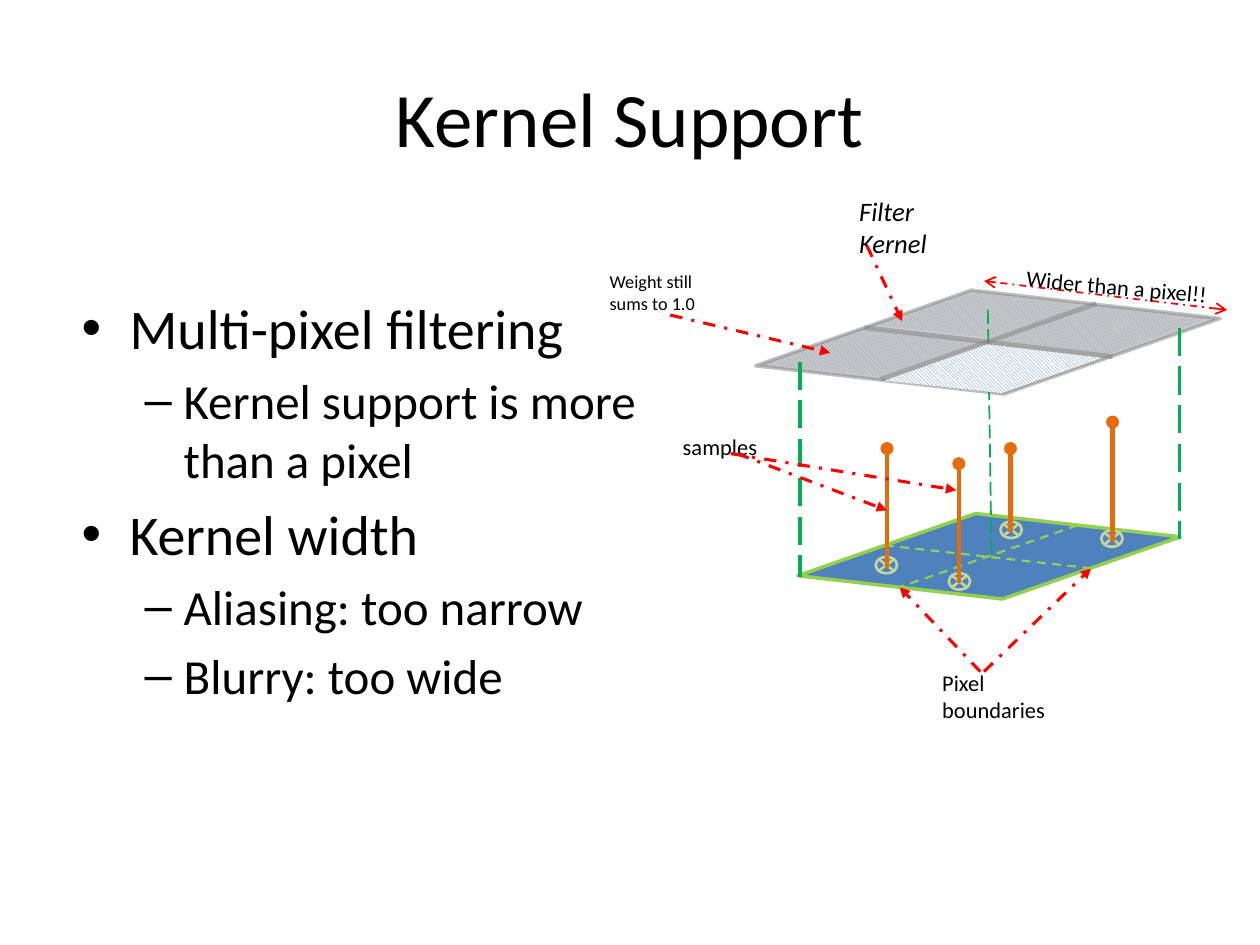
import pptx
import pptx.util
import pptx.dml.color
import pptx.enum.dml
import pptx.enum.shapes
import pptx.enum.text
import pptx.oxml.ns
from lxml import etree

PX = 9144  # 100 px to the inch
Pt = pptx.util.Pt
RGB = pptx.dml.color.RGBColor.from_string
SHAPE = pptx.enum.shapes.MSO_SHAPE
DASH = pptx.enum.dml.MSO_LINE
ALIGN = pptx.enum.text.PP_ALIGN
ANCHOR = pptx.enum.text.MSO_ANCHOR
qn = pptx.oxml.ns.qn

THEME = dict(
    font="Calibri", ink="000000", paper="FFFFFF", blue="4F81BD",
    edge="92D050", veil="A6A6A6", grey="808080", post="00B050",
    red="FF0000", stem="E46C0A", ring="C3D69B",
    title=44, levels=(32, 28), label=12.8, small=10.4, kernel=15.2)
MARKS = (("•", 38, -38), ("–", 81, -31))  # bullet, margin, indent

deck = pptx.Presentation()
deck.slide_width, deck.slide_height = 1000 * PX, 750 * PX
slide = deck.slides.add_slide(deck.slide_layouts[6])
shapes = slide.shapes


def text(words, box, size=THEME["label"], levels=None, align=ALIGN.LEFT,
         anchor=ANCHOR.TOP, italic=False, turn=0, gap=0.2):
    item = shapes.add_textbox(*[n * PX for n in box])
    item.rotation = turn
    frame = item.text_frame
    frame.word_wrap = True
    frame.vertical_anchor = anchor
    for i, row in enumerate(words.split("\n")):
        para = frame.add_paragraph() if i else frame.paragraphs[0]
        para.alignment = align
        high = THEME["levels"][levels[i]] if levels else size
        para.space_before = Pt(round(high * gap, 1))
        if levels:
            mark, left, indent = MARKS[levels[i]]
            props = para._p.get_or_add_pPr()
            props.set("marL", str(left * PX))
            props.set("indent", str(indent * PX))
            etree.SubElement(props, qn("a:buFont"), typeface="Arial")
            etree.SubElement(props, qn("a:buChar"), char=mark)
        run = para.add_run()
        run.text = row
        run.font.name = THEME["font"]
        run.font.size = Pt(high)
        run.font.italic = italic
        run.font.color.rgb = RGB(THEME["ink"])


def line(start, end, color, width, dash=None, head=None, tail=None, alpha=None):
    item = shapes.add_connector(pptx.enum.shapes.MSO_CONNECTOR.STRAIGHT,
                                *[n * PX for n in start + end])
    item.line.color.rgb = RGB(THEME[color])
    item.line.width = Pt(width)
    if dash:
        item.line.dash_style = dash
    props = item._element.spPr
    pen = props.find(qn("a:ln"))
    if alpha:
        etree.SubElement(next(pen.iter(qn("a:srgbClr"))), qn("a:alpha"),
                         val=str(alpha * 1000))
    for name, kind in (("a:headEnd", head), ("a:tailEnd", tail)):
        if kind:
            etree.SubElement(pen, qn(name), type=kind)
    etree.SubElement(props, qn("a:effectLst"))


# Title and bullets
text("Kernel Support", (50, 30, 900, 125), size=THEME["title"],
     align=ALIGN.CENTER, anchor=ANCHOR.MIDDLE, gap=0)
text("Multi-pixel filtering\nKernel support is more than a pixel\n"
     "Kernel width\nAliasing: too narrow\nBlurry: too wide",
     (55, 228, 477, 330), levels=(0, 1, 0, 1, 1))

# Hatched kernel patches; the front one lies over the plates
patches = [
    [(605, 289), (686, 260), (778, 271), (699, 299)],
    [(786, 270), (867, 242), (959, 253), (880, 281)],
    [(696, 258), (773, 232), (862, 243), (784, 268)],
    [(702, 302), (783, 273), (875, 284), (795, 312)],
]
plates = [
    ((603, 232, 362, 79), "veil", 59, "grey", 49),
    ((636, 409, 298, 65), "blue", 100, "edge", 100),
]
for i, spots in enumerate(patches):
    if i == 3:
        # Kernel plate above, pixel plate below
        for box, fill, clear, edge, fade in plates:
            plate = shapes.add_shape(SHAPE.PARALLELOGRAM, *[n * PX for n in box])
            plate.adjustments[0] = 2.07
            plate.rotation = 6.5
            plate.shadow.inherit = False
            plate.fill.solid()
            plate.fill.fore_color.rgb = RGB(THEME[fill])
            plate.line.color.rgb = RGB(THEME[edge])
            plate.line.width = Pt(2)
            tones = plate._element.spPr.iter(qn("a:srgbClr"))
            for tone, alpha in zip(list(tones), (clear, fade)):
                if alpha < 100:
                    etree.SubElement(tone, qn("a:alpha"), val=str(alpha * 1000))
        line((784, 246), (787, 441), "post", 1, DASH.LONG_DASH)
    pen = shapes.build_freeform(*spots[0], scale=PX)
    pen.add_line_segments(spots[1:], close=True)
    patch = pen.convert_to_shape()
    patch.shadow.inherit = False
    patch.fill.patterned()
    patch.fill.pattern = pptx.enum.dml.MSO_PATTERN.DARK_DOWNWARD_DIAGONAL
    patch.fill.fore_color.rgb = RGB(THEME["blue"])
    patch.fill.back_color.rgb = RGB(THEME["paper"])
    patch.line.fill.background()

# Pixel boundaries
text("Pixel boundaries", (738, 526, 104, 63))
for start, end in (((778, 533), (714, 466)), ((781, 533), (866, 451))):
    line(start, end, "red", 1.75, DASH.DASH_DOT, tail="triangle")
for start, end in (((855, 417), (714, 466)), ((866, 451), (704, 433))):
    line(start, end, "edge", 1.25, DASH.DASH)

# Samples: a ring on the pixel plate, then a stem with a round top
for x, y in ((695, 442), (794, 414), (753, 455), (874, 421)):
    ring = shapes.add_shape(SHAPE.FLOWCHART_SUMMING_JUNCTION,
                            x * PX, y * PX, 17 * PX, 13 * PX)
    ring.shadow.inherit = False
    ring.fill.background()
    ring.line.color.rgb = RGB(THEME["ring"])
    ring.line.width = Pt(1.5)
for x, top, foot in ((802, 356, 422), (704, 356, 451),
                     (883, 335, 430), (761, 368, 463)):
    line((x, top), (x, foot), "stem", 2.5, head="oval")

# Corner posts
for x, top, foot in ((635, 287, 458), (936, 260, 428)):
    line((x, top), (x, foot), "post", 2, DASH.LONG_DASH)

# Kernel dividers and width
line((883, 283), (686, 260), "grey", 2.75, alpha=49)
line((974, 246), (781, 223), "red", 1, DASH.DASH_DOT, head="arrow", tail="arrow")
text("Wider than a pixel!!", (804, 212, 176, 45), turn=5.2)

# Labels with their pointers
text("Weight still sums to 1.0", (474, 210, 107, 44), size=THEME["small"])
text("samples", (532, 339, 88, 43))
text("Filter Kernel", (672, 150, 100, 54), size=THEME["kernel"], italic=True)
line((870, 241), (699, 301), "grey", 2.75, alpha=49)
for start, end in (((585, 360), (704, 405)), ((580, 360), (759, 389)),
                   ((532, 250), (659, 280)), ((688, 195), (716, 255))):
    line(start, end, "red", 1.75, DASH.DASH_DOT, tail="triangle")

deck.save("out.pptx")
